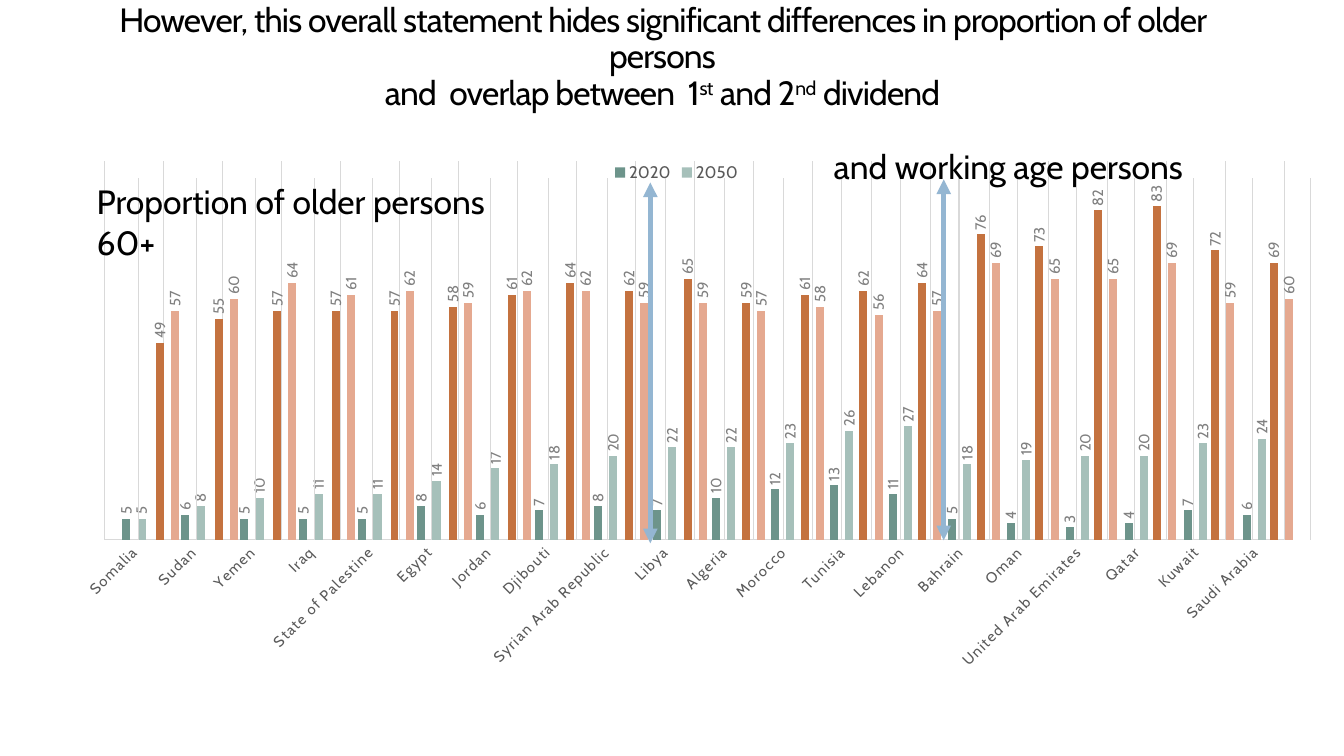
from lxml import etree
from pptx import Presentation
from pptx.chart.data import CategoryChartData
from pptx.dml.color import RGBColor
from pptx.enum.chart import XL_CHART_TYPE as ChartType
from pptx.enum.chart import XL_LABEL_POSITION as LabelPosition
from pptx.enum.chart import XL_LEGEND_POSITION as LegendPosition
from pptx.enum.chart import XL_TICK_MARK as TickMark
from pptx.enum.shapes import MSO_CONNECTOR as Connector
from pptx.enum.text import MSO_ANCHOR as Anchor
from pptx.enum.text import PP_ALIGN as Align
from pptx.oxml import parse_xml
from pptx.oxml.ns import nsdecls, qn
from pptx.util import Inches, Pt

FONT = "Cabin"
COLORS = {
    "text": "000000", "axis": "595959", "label": "808080", "grid": "D9D9D9",
    "arrow": "94B6D2", "older_2020": "6D948B", "older_2050": "A6C0BA",
    "working_2020": "C4723F", "working_2050": "E5A990",
}
COUNTRIES = [
    "Somalia", "Sudan", "Yemen", "Iraq", "State of Palestine", "Egypt", "Jordan",
    "Djibouti", "Syrian Arab Republic", "Libya", "Algeria", "Morocco", "Tunisia",
    "Lebanon", "Bahrain", "Oman", "United Arab Emirates", "Qatar", "Kuwait",
    "Saudi Arabia",
]
OLDER = [
    ("2020", "older_2020",
     [5, 6, 5, 5, 5, 8, 6, 7, 8, 7, 10, 12, 13, 11, 5, 4, 3, 4, 7, 6]),
    ("2050", "older_2050",
     [5, 8, 10, 11, 11, 14, 17, 18, 20, 22, 22, 23, 26, 27, 18, 19, 20, 20, 23, 24]),
]
WORKING = [
    ("Series 1", "working_2020",
     [49, 55, 57, 57, 57, 58, 61, 64, 62, 65, 59, 61, 62, 64, 76, 73, 82, 83, 72, 69]),
    ("Series 2", "working_2050",
     [57, 60, 64, 61, 62, 59, 62, 62, 59, 59, 57, 58, 56, 57, 69, 65, 65, 69, 59, 60]),
]


def color(name):
    return RGBColor.from_string(COLORS[name])


def style_font(font, size, name):
    font.name = FONT
    font.size = Pt(size)
    font.color.rgb = color(name)


def rotate_text(element, degrees):
    body = element.find(qn("c:txPr")).find(qn("a:bodyPr"))
    body.set("rot", str(degrees * 60000))
    body.set("vert", "horz")


def clear_background(chart, plot_box):
    """Make the chart see-through and fix its inner plot box (fractions)."""
    no_fill = (f'<c:spPr {nsdecls("c", "a")}><a:noFill/>'
               '<a:ln><a:noFill/></a:ln></c:spPr>')
    root = chart._chartSpace
    root.find(qn("c:chart")).addnext(parse_xml(no_fill))
    area = root.find(qn("c:chart")).find(qn("c:plotArea"))
    area.append(parse_xml(no_fill))
    for old in area.findall(qn("c:layout")):
        area.remove(old)
    layout = etree.Element(qn("c:layout"))
    manual = etree.SubElement(layout, qn("c:manualLayout"))
    settings = [("layoutTarget", "inner"), ("xMode", "edge"), ("yMode", "edge")]
    settings += zip("xywh", plot_box)
    for tag, value in settings:
        etree.SubElement(manual, qn(f"c:{tag}")).set("val", str(value))
    area.insert(0, layout)


def add_column_chart(page, box, plot_box, categories, series_list):
    data = CategoryChartData(number_format="0")
    data.categories = categories
    for name, _, values in series_list:
        data.add_series(name, values)
    frame = page.shapes.add_chart(
        ChartType.COLUMN_CLUSTERED, *map(Inches, box), data)
    chart = frame.chart
    style_font(chart.font, 10, "text")
    chart.has_title = False
    chart.has_legend = False

    # Axes
    value_axis = chart.value_axis
    value_axis.minimum_scale, value_axis.maximum_scale = 0, 90
    value_axis.has_major_gridlines = False
    value_axis.visible = False
    category_axis = chart.category_axis
    category_axis.has_major_gridlines = True
    grid = category_axis.major_gridlines.format.line
    grid.color.rgb = color("grid")
    grid.width = Pt(0.75)

    # Columns and their upright labels
    plot = chart.plots[0]
    plot.vary_by_categories = False
    plot.gap_width, plot.overlap = 444, -90
    for series, (_, fill_name, _) in zip(plot.series, series_list):
        series.format.fill.solid()
        series.format.fill.fore_color.rgb = color(fill_name)
        labels = series.data_labels
        labels.show_value = True
        labels.number_format = "0"
        labels.number_format_is_linked = False
        labels.position = LabelPosition.OUTSIDE_END
        style_font(labels.font, 10.6, "label")
        rotate_text(labels._element, -90)
    clear_background(chart, plot_box)
    return chart


def add_older_chart(page, box):
    chart = add_column_chart(
        page, box, (0.049, 0.018, 0.93, 0.661), COUNTRIES, OLDER)
    axis = chart.category_axis
    axis.major_tick_mark = axis.minor_tick_mark = TickMark.NONE
    axis.format.line.color.rgb = color("grid")
    axis.format.line.width = Pt(0.75)
    style_font(axis.tick_labels.font, 10.6, "axis")
    axis.tick_labels.font._element.set("spc", "100")
    rotate_text(axis._element, -45)
    chart.has_legend = True
    chart.legend.position = LegendPosition.TOP
    chart.legend.include_in_layout = False
    style_font(chart.legend.font, 12, "axis")


def add_working_chart(page, box):
    numbers = [str(number + 1) for number in range(len(COUNTRIES))]
    chart = add_column_chart(
        page, box, (0.042, 0.08, 0.954, 0.587), numbers, WORKING)
    chart.category_axis.visible = False


def fill_title(page, box):
    title = page.shapes.title
    title.left, title.top, title.width, title.height = map(Inches, box)
    frame = title.text_frame
    frame.word_wrap = True
    frame.vertical_anchor = Anchor.MIDDLE
    para = frame.paragraphs[0]
    para.text = ("However, this overall statement hides significant differences "
                 "in proportion of older persons\vand  overlap between  1")
    for text in ("st", " and 2", "nd", " dividend"):
        para.add_run().text = text
    para.alignment = Align.CENTER
    para.line_spacing = 0.9
    for span in para.runs:
        style_font(span.font, 24, "text")
        span.font._element.set("spc", "-60")
        if span.text in ("st", "nd"):
            span.font._element.set("baseline", "30000")


def add_caption(page, box, text):
    frame = page.shapes.add_textbox(*map(Inches, box)).text_frame
    frame.word_wrap = True
    frame.text = text
    style_font(frame.paragraphs[0].runs[0].font, 24, "text")


def add_divider(page, x, top, bottom):
    arrow = page.shapes.add_connector(
        Connector.STRAIGHT, *map(Inches, (x, bottom, x, top)))
    arrow.line.color.rgb = color("arrow")
    arrow.line.width = Pt(3.5)
    line = arrow.line._get_or_add_ln()
    for end in ("headEnd", "tailEnd"):
        etree.SubElement(line, qn(f"a:{end}")).set("type", "triangle")
    etree.SubElement(arrow._element.spPr, qn("a:effectLst"))


def main():
    deck = Presentation()
    deck.slide_width, deck.slide_height = Inches(13.33), Inches(7.5)
    page = deck.slides.add_slide(deck.slide_layouts[5])
    # Overlaid charts
    add_older_chart(page, (0.42, 1.5, 12.58, 5.68))
    add_working_chart(page, (0.86, 1.28, 12.19, 6.11))
    # Title and captions
    fill_title(page, (0.55, 0.08, 12.04, 0.99))
    add_caption(page, (0.86, 1.75, 4.7, 0.5), "Proportion of older persons 60+")
    add_caption(page, (8.17, 1.4, 4.5, 0.5), "and working age persons")
    # Dividers between country groups
    add_divider(page, 6.45, 1.81, 5.39)
    add_divider(page, 9.36, 1.78, 5.36)
    deck.save("out.pptx")


if __name__ == "__main__":
    main()
